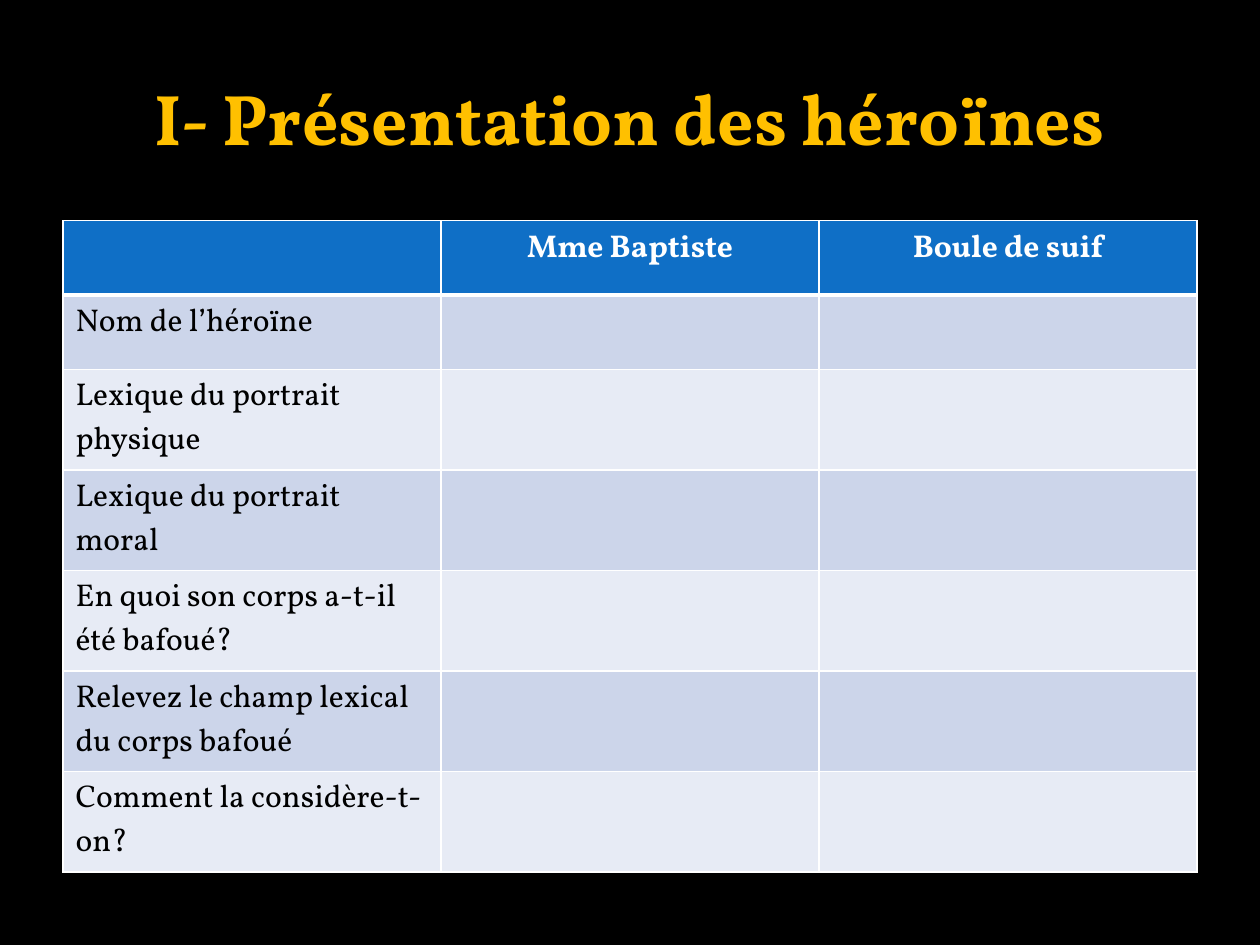
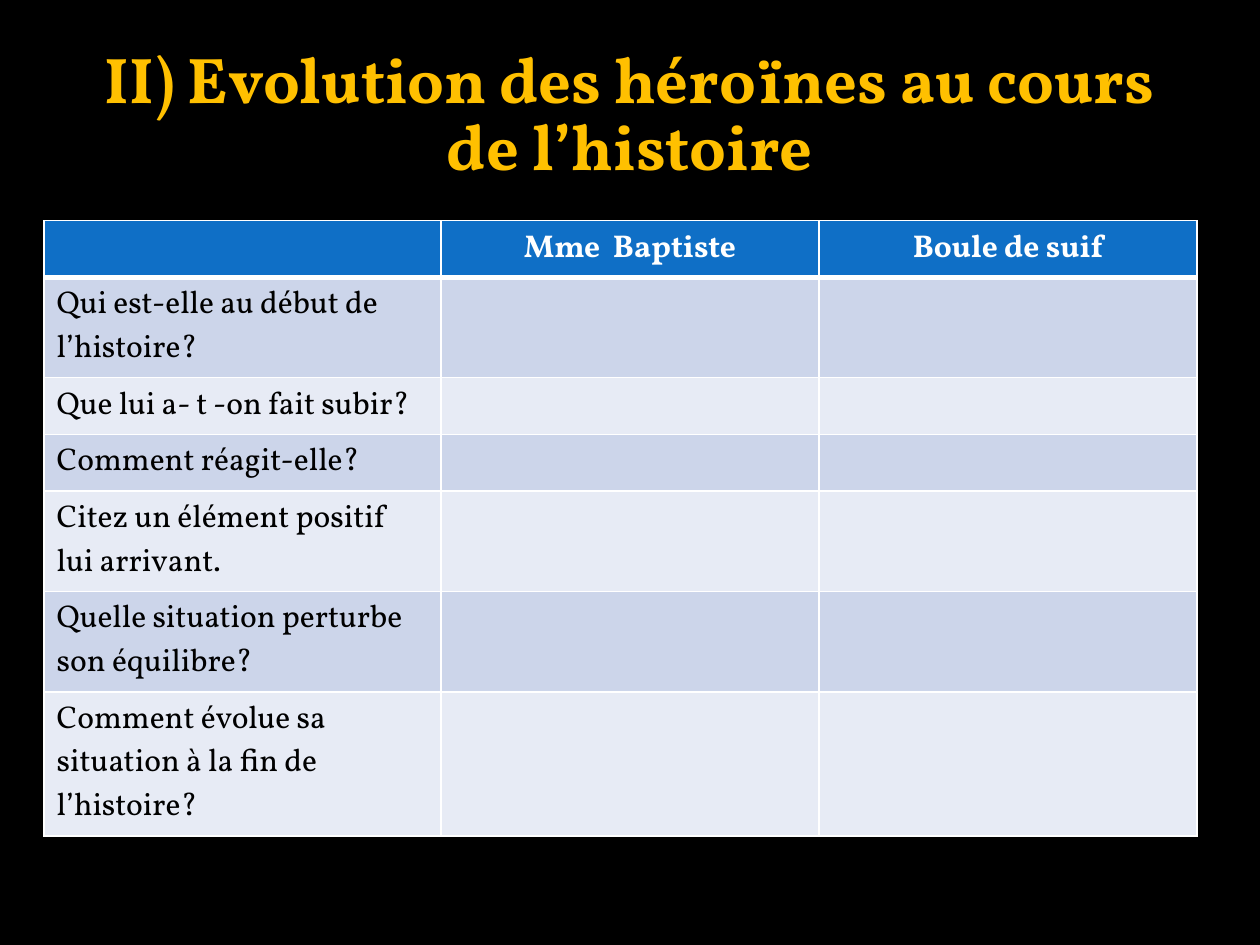
import pptx
import pptx.util
import pptx.dml.color
import pptx.enum.text
import pptx.oxml

Cm, Pt = pptx.util.Cm, pptx.util.Pt
RGB = pptx.dml.color.RGBColor
MID = pptx.enum.text.PP_ALIGN.CENTER

BLACK = RGB(0, 0, 0)
WHITE = RGB(255, 255, 255)
GOLD = RGB(0xFF, 0xC0, 0x00)
BLUE = RGB(0x0F, 0x6F, 0xC6)
BANDS = [RGB(0xE7, 0xEB, 0xF5), RGB(0xCC, 0xD5, 0xEA)]

FACE = "Vollkorn"
HEAD = {"name": FACE, "size": Pt(18), "bold": True}
BODY = {"name": FACE, "size": Pt(18), "bold": False}
NS = 'xmlns:a="http://schemas.openxmlformats.org/drawingml/2006/main"'

PAGES = [
    {
        "title": "I- Présentation des héroïnes",
        "size": 41, "lead": 1.0, "drop": 14,
        "left": 1.27, "first": 7.62, "row": 1.5, "tall": 11.89,
        "heads": ["Mme Baptiste", "Boule de suif"],
        "asks": [
            "Nom de l’héroïne",
            "Lexique du portrait physique",
            "Lexique du portrait moral",
            "En quoi son corps a-t-il été bafoué?",
            "Relevez le champ lexical du corps bafoué",
            "Comment la considère-t-on?",
        ],
    },
    {
        "title": "II) Evolution des héroïnes au cours de l’histoire",
        "size": 36.9, "lead": 0.87, "drop": 17,
        "left": 0.89, "first": 8.0, "row": 1.04, "tall": 10.97,
        "heads": ["Mme  Baptiste", "Boule de suif"],
        "asks": [
            "Qui est-elle au début de l’histoire?",
            "Que lui a- t -on fait subir?",
            "Comment réagit-elle?",
            "Citez un élément positif lui arrivant.",
            "Quelle situation perturbe son équilibre?",
            "Comment évolue sa situation à la fin de l’histoire?",
        ],
    },
]


def write(frame, text, style, tint):
    """Put one styled run in the frame and return its paragraph."""
    par = frame.paragraphs[0]
    run = par.add_run()
    run.text = text
    for key, value in style.items():
        setattr(run.font, key, value)
    run.font.color.rgb = tint
    return par


def edge(cell, row):
    """Draw white cell borders, thick between the header and the body."""
    wide = {"L": 1, "R": 1, "T": 3 if row == 1 else 1, "B": 3 if row == 0 else 1}
    props = cell._tc.get_or_add_tcPr()
    for spot, (side, width) in enumerate(wide.items()):
        props.insert(spot, pptx.oxml.parse_xml(
            f'<a:ln{side} {NS} w="{Pt(width)}"><a:solidFill>'
            f'<a:srgbClr val="{WHITE}"/></a:solidFill></a:ln{side}>'))


deck = pptx.Presentation()
deck.slide_width, deck.slide_height = Cm(25.4), Cm(19.05)

for page in PAGES:
    slide = deck.slides.add_slide(deck.slide_layouts[5])
    slide.background.fill.solid()
    slide.background.fill.fore_color.rgb = BLACK

    title = slide.shapes.title
    title.left, title.top = Cm(1.27), Cm(0.76)
    title.width, title.height = Cm(22.86), Cm(3.18)
    frame = title.text_frame
    frame.auto_size = pptx.enum.text.MSO_AUTO_SIZE.NONE
    frame.vertical_anchor = pptx.enum.text.MSO_ANCHOR.MIDDLE
    style = {"name": FACE, "size": Pt(page["size"]), "bold": True}
    par = write(frame, page["title"], style, GOLD)
    par.alignment = MID
    par.line_spacing = page["lead"]
    par.space_before = Pt(page["drop"])

    lines = [[""] + page["heads"]] + [[ask, "", ""] for ask in page["asks"]]
    wides = [page["first"], 7.62, 7.62]
    grid = slide.shapes.add_table(
        len(lines), len(wides), Cm(page["left"]), Cm(4.45),
        Cm(sum(wides)), Cm(page["tall"])).table
    for col, wide in zip(grid.columns, wides):
        col.width = Cm(wide)
    for row, line in enumerate(lines):
        grid.rows[row].height = Cm(page["row"])
        for col, text in enumerate(line):
            cell = grid.cell(row, col)
            cell.fill.solid()
            cell.fill.fore_color.rgb = BANDS[row % 2] if row else BLUE
            edge(cell, row)
            if text and row:
                write(cell.text_frame, text, BODY, BLACK)
            elif text:
                write(cell.text_frame, text, HEAD, WHITE).alignment = MID

deck.save("out.pptx")
